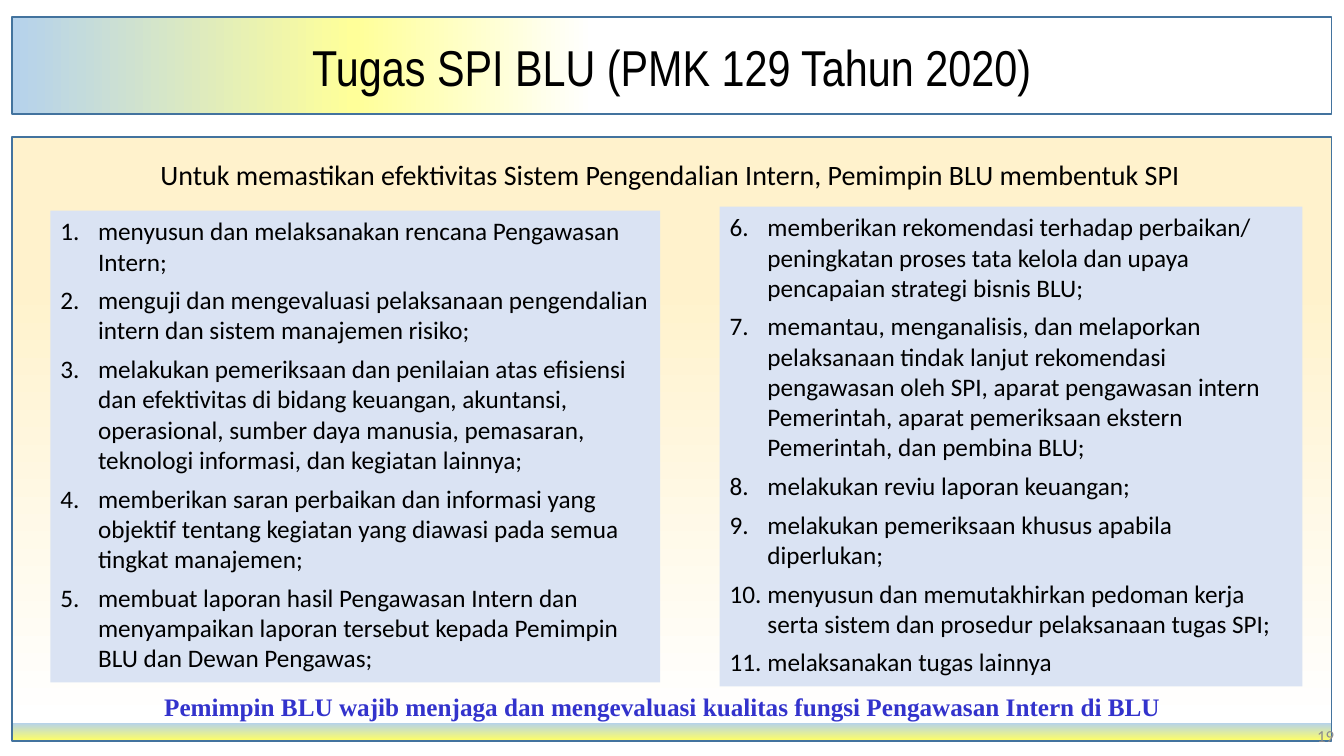
from lxml import etree
from pptx import Presentation
from pptx import util as u
from pptx.dml.color import RGBColor
from pptx.enum import shapes, text
from pptx.oxml import parse_xml
from pptx.oxml.ns import nsdecls, qn

theme = {
    "ink": "000000", "note": "3333CC", "page": "8C8C8C",
    "edge": "43739E", "card": "DAE3F3",
    "title": ("Arial Narrow", 36), "lead": ("Calibri", 20),
    "list": ("Calibri", 18), "foot": ("Times New Roman", 18),
    "num": ("Calibri", 12),
    "bar": [(0, "B5D2EC"), (26, "FFFF99"), (44, "FFFFFF"), (86, "FFFFFF")],
    "panel": [(25, "FFF2CC"), (97, "FFFFFF"), (97, "B5D2EC"), (100, "FFFF66")],
}

deck = Presentation()
deck.slide_width, deck.slide_height = u.Inches(13.333), u.Inches(7.5)
slide = deck.slides.add_slide(deck.slide_layouts[1])
parts = slide.shapes


def area(x, y, w, h):
    """Turn percentages of the slide's width and height into lengths."""
    wide, high = deck.slide_width / 100, deck.slide_height / 100
    return [u.Emu(round(n)) for n in (x * wide, y * high, w * wide, h * high)]


def write(para, words, style, color="ink"):
    para.text = words
    font = para.font
    font.name, size = theme[style]
    font.size = u.Pt(size)
    font.color.rgb = RGBColor.from_string(theme[color])


# Framed panels go behind the placeholders
frames = [("panel", 90, (0.9, 18.13, 98.18, 79.87)),
          ("bar", 0, (0.9, 2.27, 98.18, 12.8))]
for depth, (name, angle, box) in enumerate(frames, 2):
    frame = parts.add_shape(shapes.MSO_SHAPE.ROUNDED_RECTANGLE, *area(*box))
    frame.adjustments[0] = 0
    frame.shadow.inherit = False
    frame.line.color.rgb = RGBColor.from_string(theme["edge"])
    frame.line.width = u.Pt(1)
    stops = "".join(
        f'<a:gs pos="{pos * 1000}"><a:srgbClr val="{tone}"/></a:gs>'
        for pos, tone in theme[name])
    fill = parse_xml(
        f'<a:gradFill {nsdecls("a")} rotWithShape="1"><a:gsLst>{stops}</a:gsLst>'
        f'<a:lin ang="{angle * 60000}" scaled="0"/></a:gradFill>')
    frame.element.spPr.find(qn("a:prstGeom")).addnext(fill)
    parts.element.insert(depth, frame.element)

# Title and lead sentence
heads = [
    (parts.title, (0.9, 4.27, 98.18, 10.13), "title", text.PP_ALIGN.CENTER,
     text.MSO_ANCHOR.MIDDLE, 0, "Tugas SPI BLU (PMK 129 Tahun 2020)"),
    (slide.placeholders[1], (11.18, 20.67, 86.25, 5.33), "lead",
     text.PP_ALIGN.LEFT, text.MSO_ANCHOR.TOP, 10,
     "Untuk memastikan efektivitas Sistem Pengendalian Intern, "
     "Pemimpin BLU membentuk SPI"),
]
for head, box, style, align, anchor, gap, words in heads:
    head.left, head.top, head.width, head.height = area(*box)
    frame = head.text_frame
    frame.auto_size = text.MSO_AUTO_SIZE.NONE
    frame.vertical_anchor = anchor
    para = frame.paragraphs[0]
    write(para, words, style)
    para.alignment = align
    para.line_spacing = 0.9
    para.space_before = u.Pt(gap)
    props = para._p.get_or_add_pPr()
    props.set("marL", "0")
    props.set("indent", "0")
    etree.SubElement(props, qn("a:buNone"))
    props.append(props.find(qn("a:defRPr")))

# Numbered duties in two cards
cards = [
    (1, (3.75, 27.87, 45.38, 62.4), [
        "menyusun dan melaksanakan rencana Pengawasan Intern;",
        "menguji dan mengevaluasi pelaksanaan pengendalian intern dan sistem "
        "manajemen risiko;",
        "melakukan pemeriksaan dan penilaian atas efisiensi dan efektivitas di "
        "bidang keuangan, akuntansi, operasional, sumber daya manusia, "
        "pemasaran, teknologi informasi, dan kegiatan lainnya;",
        "memberikan saran perbaikan dan informasi yang objektif tentang "
        "kegiatan yang diawasi pada semua tingkat manajemen;",
        "membuat laporan hasil Pengawasan Intern dan menyampaikan laporan "
        "tersebut kepada Pemimpin BLU dan Dewan Pengawas;",
    ]),
    (6, (53.55, 27.33, 43.35, 63.47), [
        "memberikan rekomendasi terhadap perbaikan/ peningkatan proses tata "
        "kelola dan upaya pencapaian strategi bisnis BLU;",
        "memantau, menganalisis, dan melaporkan pelaksanaan tindak lanjut "
        "rekomendasi pengawasan oleh SPI, aparat pengawasan intern Pemerintah, "
        "aparat pemeriksaan ekstern Pemerintah, dan pembina BLU;",
        "melakukan reviu laporan keuangan;",
        "melakukan pemeriksaan khusus apabila diperlukan;",
        "menyusun dan memutakhirkan pedoman kerja serta sistem dan prosedur "
        "pelaksanaan tugas SPI;",
        "melaksanakan tugas lainnya",
    ]),
]
dent = u.Inches(0.375)
for start, box, duties in cards:
    card = parts.add_shape(shapes.MSO_SHAPE.RECTANGLE, *area(*box))
    card.shadow.inherit = False
    card.fill.solid()
    card.fill.fore_color.rgb = RGBColor.from_string(theme["card"])
    card.line.fill.background()
    frame = card.text_frame
    frame.word_wrap = True
    frame.auto_size = text.MSO_AUTO_SIZE.SHAPE_TO_FIT_TEXT
    frame.vertical_anchor = text.MSO_ANCHOR.TOP
    for row, duty in enumerate(duties):
        para = frame.add_paragraph() if row else frame.paragraphs[0]
        write(para, duty, "list")
        para.alignment = text.PP_ALIGN.LEFT
        para.space_before = u.Pt(6)
        props = para._p.get_or_add_pPr()
        props.set("marL", str(dent))
        props.set("indent", str(-dent))
        etree.SubElement(props, qn("a:buFont"), typeface="+mj-lt")
        etree.SubElement(props, qn("a:buAutoNum"), type="arabicPeriod",
                         startAt=str(start))
        props.append(props.find(qn("a:defRPr")))

# Page number and closing note
notes = [
    ((77.5, 94.67, 22.5, 5.33), "19", "num", "page", False,
     text.PP_ALIGN.RIGHT, text.MSO_ANCHOR.MIDDLE),
    ((11.48, 90.8, 82.95, 5.33),
     "Pemimpin BLU wajib menjaga dan mengevaluasi kualitas fungsi "
     "Pengawasan Intern di BLU", "foot", "note", True,
     text.PP_ALIGN.LEFT, text.MSO_ANCHOR.TOP),
]
for box, words, style, color, bold, align, anchor in notes:
    frame = parts.add_textbox(*area(*box)).text_frame
    frame.word_wrap = True
    frame.vertical_anchor = anchor
    para = frame.paragraphs[0]
    write(para, words, style, color)
    para.font.bold = bold
    para.alignment = align

deck.save("out.pptx")
